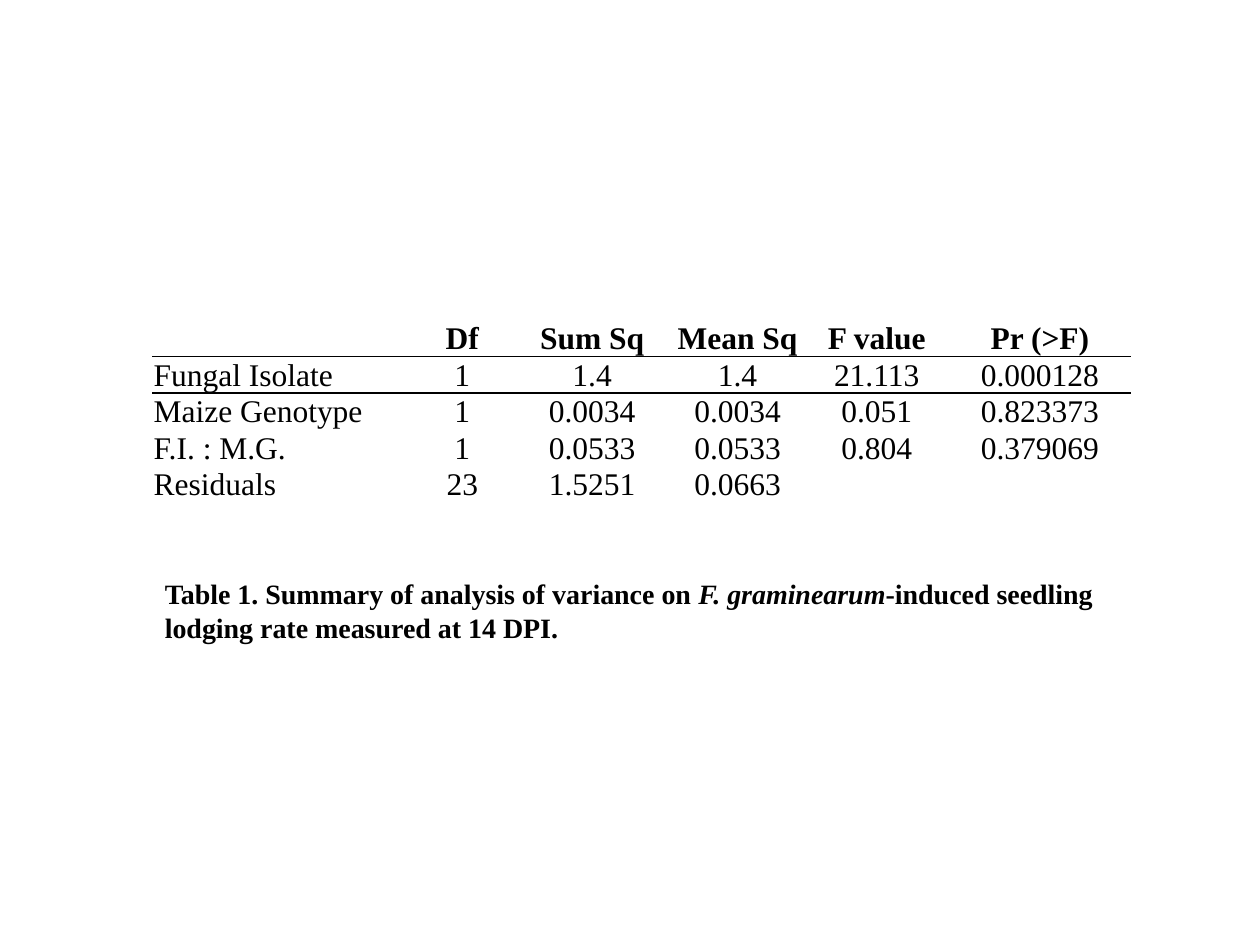
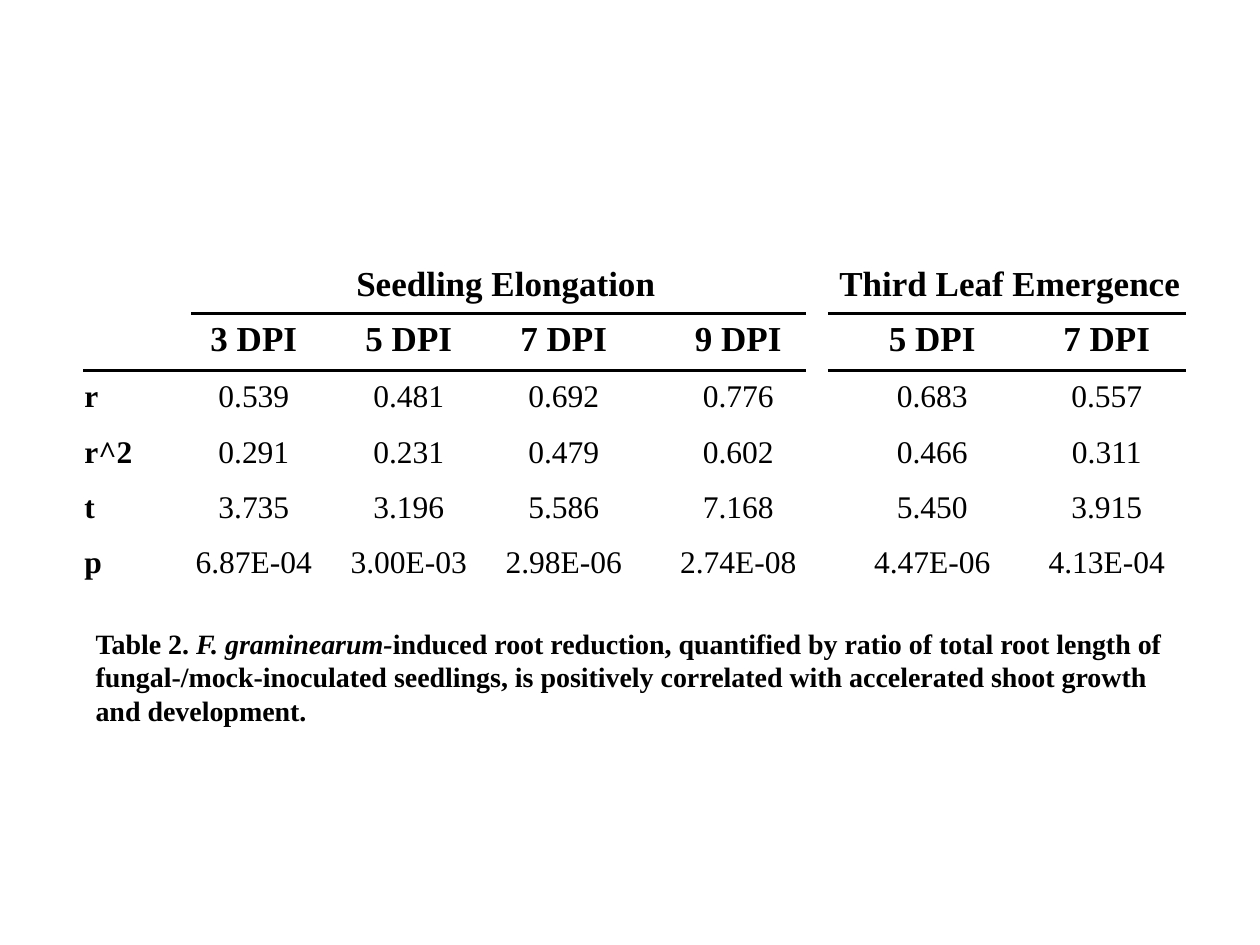
from lxml import etree
from pptx import Presentation
from pptx.dml.color import RGBColor as Rgb
from pptx.enum.shapes import MSO_CONNECTOR as Conn
from pptx.enum.text import MSO_ANCHOR as Anchor, MSO_AUTO_SIZE as Auto, PP_ALIGN as Align
from pptx.oxml import parse_xml
from pptx.oxml.ns import nsdecls, qn
from pptx.util import Inches, Pt

COLORS = {"ink": "000000", "page": "FFFFFF"}
FONT = "Times New Roman"
NO_STYLE = "{2D5ABB26-0587-4C30-8999-92F81FD0307C}"
CELL = {
    "margin_left": Inches(0.01),
    "margin_right": Inches(0.01),
    "margin_top": Inches(0.01),
    "margin_bottom": Inches(0),
    "vertical_anchor": Anchor.BOTTOM,
}


def apply(target, values):
    for name, value in values.items():
        setattr(target, name, value)


class Deck:
    """Holds the shared style and the current slide."""

    def __init__(self, width, height):
        self.prs = Presentation()
        self.prs.slide_width = Inches(width)
        self.prs.slide_height = Inches(height)
        self.slide = None

    def page(self):
        self.slide = self.prs.slides.add_slide(self.prs.slide_layouts[6])
        fill = self.slide.background.fill
        fill.solid()
        fill.fore_color.rgb = Rgb.from_string(COLORS["page"])

    def run(self, para, text, size, bold=False, italic=False):
        run = para.add_run()
        run.text = text
        apply(run.font, {"name": FONT, "size": Pt(size), "bold": bold, "italic": italic})
        run.font.color.rgb = Rgb.from_string(COLORS["ink"])

    def caption(self, left, top, width, height, parts):
        """Bold caption; parts are (text, italic) pairs."""
        box = self.slide.shapes.add_textbox(
            Inches(left), Inches(top), Inches(width), Inches(height))
        apply(box.text_frame, {"word_wrap": True, "auto_size": Auto.SHAPE_TO_FIT_TEXT})
        for text, italic in parts:
            self.run(box.text_frame.paragraphs[0], text, 16, True, italic)

    def table(self, left, top, widths, height, rows, heads=1, size=18, big=18, stub=False):
        """Plain table: bold heads in size big, stub makes column one bold."""
        frame = self.slide.shapes.add_table(
            len(rows), len(widths), Inches(left), Inches(top),
            Inches(sum(widths)), Inches(height * len(rows)))
        table = frame.table
        apply(table, {"first_row": False, "horz_banding": False})
        table._tbl.tblPr.find(qn("a:tableStyleId")).text = NO_STYLE
        for col, width in zip(table.columns, widths):
            col.width = Inches(width)
        for row in table.rows:
            row.height = Inches(height)
        for i, row in enumerate(rows):
            for j, text in enumerate(row):
                head = i < heads
                self.cell(table.cell(i, j), text, big if head else size,
                          head or (stub and j == 0), j > 0)
        return table

    def cell(self, cell, text, size, bold, center):
        apply(cell, CELL)
        cell.fill.background()
        para = cell.text_frame.paragraphs[0]
        para.alignment = Align.CENTER if center else Align.LEFT
        if text:
            self.run(para, text, size, bold)
        else:
            # Keeps an empty cell from stretching its row
            etree.SubElement(para._p, qn("a:endParaRPr"), sz="1200")

    def border(self, cell, side, width):
        line = parse_xml(
            f'<a:ln{side} {nsdecls("a")} w="{Pt(width)}"><a:solidFill>'
            f'<a:srgbClr val="{COLORS["ink"]}"/></a:solidFill></a:ln{side}>')
        cell._tc.get_or_add_tcPr().insert(0, line)

    def rule(self, start, end, y, width=2):
        line = self.slide.shapes.add_connector(
            Conn.STRAIGHT, Inches(start), Inches(y), Inches(end), Inches(y))
        line.line.width = Pt(width)
        line.line.color.rgb = Rgb.from_string(COLORS["ink"])
        etree.SubElement(line._element.spPr, qn("a:effectLst"))


def lodging(deck):
    deck.page()

    # Analysis of variance
    rows = [
        ["", "Df", "Sum Sq", "Mean Sq", "F value", "Pr (>F)"],
        ["Fungal Isolate", "1", "1.4", "1.4", "21.113", "0.000128"],
        ["Maize Genotype", "1", "0.0034", "0.0034", "0.051", "0.823373"],
        ["F.I. : M.G.", "1", "0.0533", "0.0533", "0.804", "0.379069"],
        ["Residuals", "23", "1.5251", "0.0663", "", ""],
    ]
    table = deck.table(1.21, 2.54, [2.05, 0.82, 1.24, 1.07, 1.14, 1.45], 0.29, rows)
    for j in range(len(rows[0])):
        deck.border(table.cell(0, j), "B", 1)
        deck.border(table.cell(1, j), "T", 1)

    # Caption
    deck.caption(1.21, 4.53, 7.77, 0.64, [
        ("Table 1. Summary of analysis of variance on ", False),
        ("F. graminearum", True),
        ("-induced seedling lodging rate measured at 14 DPI.", False),
    ])


def growth(deck):
    deck.page()

    # Correlations with shoot growth
    rows = [
        ["", "Seedling Elongation", "", "", "", "Third Leaf Emergence", ""],
        ["", "3 DPI", "5 DPI", "7 DPI", "9 DPI", "5 DPI", "7 DPI"],
        ["r", "0.539", "0.481", "0.692", "0.776", "0.683", "0.557"],
        ["r^2", "0.291", "0.231", "0.479", "0.602", "0.466", "0.311"],
        ["t", "3.735", "3.196", "5.586", "7.168", "5.450", "3.915"],
        ["p", "6.87E-04", "3.00E-03", "2.98E-06", "2.74E-08", "4.47E-06", "4.13E-04"],
    ]
    widths = [0.74, 1.23, 1.23, 1.23, 1.54, 1.54, 1.23]
    table = deck.table(0.66, 1.97, widths, 0.44, rows, heads=2, big=20, stub=True)
    for first, last in ((1, 4), (5, 6)):
        table.cell(0, first).merge(table.cell(0, last))

    # Rules under the two head rows
    for start, end, y in ((1.52, 6.4, 2.49), (0.66, 6.4, 2.94),
                          (6.57, 9.41, 2.49), (6.57, 9.41, 2.94)):
        deck.rule(start, end, y)

    # Caption
    deck.caption(0.66, 4.92, 8.75, 0.91, [
        ("Table 2. ", False),
        ("F. graminearum-", True),
        ("induced root reduction, quantified by ratio of total root length of "
         "fungal-/mock-inoculated seedlings, is positively correlated with "
         "accelerated shoot growth and development.", False),
    ])


def main():
    deck = Deck(10, 7.5)
    lodging(deck)
    growth(deck)
    deck.prs.save("out.pptx")


if __name__ == "__main__":
    main()
